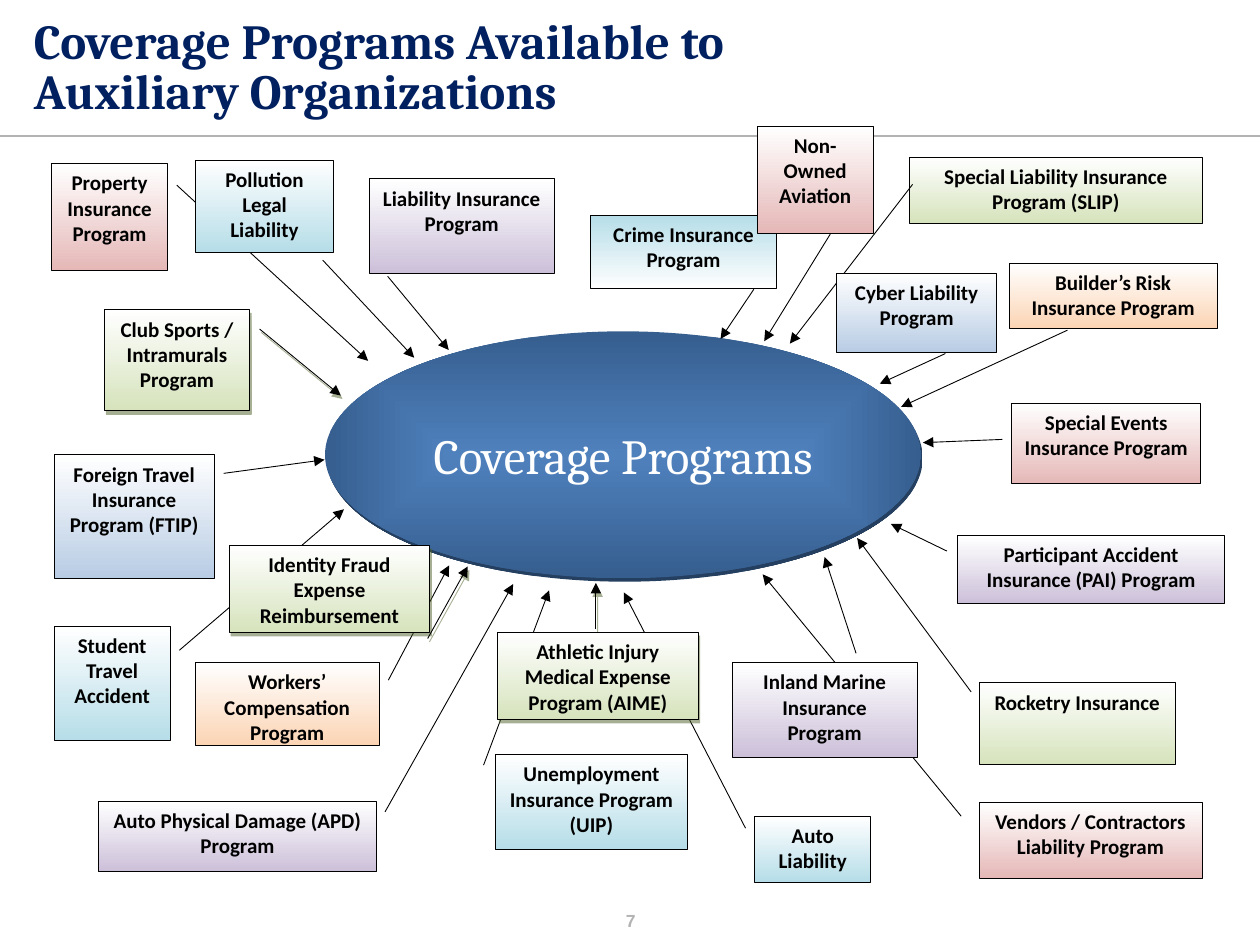
from lxml import etree
from pptx import Presentation
from pptx import util as u
from pptx.dml.color import RGBColor
from pptx.enum import shapes, text
from pptx.oxml import parse_xml
from pptx.oxml.ns import nsdecls, qn

COLS, ROWS = 100, 75
HUES = {
    "navy": "002060", "gray": "B3B3B3", "black": "000000", "white": "FFFFFF",
    "hub": "4F81BD", "rim": "365E8F", "deep": "243F60", "moss": "4E6128",
    "green": "D6E3BC", "aqua": "B6DDE8", "rose": "E5B8B7",
    "peach": "FBD4B4", "lilac": "CCC0D9", "blue": "B8CCE4",
}
FONTS = {
    "title": dict(name="Cambria", size=u.Pt(28), bold=True),
    "hub": dict(name="Cambria", size=u.Pt(28), bold=False),
    "label": dict(name="Calibri", size=u.Pt(12), bold=True),
    "page": dict(name="Arial", size=u.Pt(10), bold=True),
}
CENTER, LEFT = text.PP_ALIGN.CENTER, text.PP_ALIGN.LEFT
TOP, MIDDLE = text.MSO_ANCHOR.TOP, text.MSO_ANCHOR.MIDDLE

# Label, tint, box (column, row, columns, rows),
# pointer (start y, start x, end y, end x as shares of the box)
BACK = [
    ("Special Liability Insurance Program (SLIP)", "green",
     (72.2, 12.5, 23.2, 5.2), (0.41, 0.01, 2.84, -0.41)),
    ("Student Travel Accident", "aqua",
     (4.3, 49.7, 9.2, 9.1), (0.21, 1.08, -1.02, 2.5)),
    ("Property Insurance Program", "rose",
     (4.1, 13, 9.2, 8.5), (0.2, 1.08, 1.84, 2.73)),
    ("Vendors / Contractors Liability Program", "rose",
     (77.7, 63.7, 17.7, 6), (0.18, -0.08, -3.02, -0.97)),
    ("Builder’s Risk Insurance Program", "peach",
     (80.1, 20.9, 16.5, 5.2), (1.02, 0.28, 2.19, -0.52)),
    ("Liability Insurance Program", "lilac",
     (29.3, 14.2, 14.7, 7.5), (1.03, 0.1, 1.81, 0.43)),
    ("Unemployment Insurance Program (UIP)", "aqua",
     (39.3, 59.9, 15.3, 7.5), (0.11, -0.06, -1.74, 0.28)),
    ("Rocketry Insurance", "green",
     (77.7, 54.2, 15.6, 6.5), (0.11, -0.04, -1.77, -0.62)),
    ("Participant Accident Insurance (PAI) Program", "lilac",
     (76, 42.5, 21.2, 5.4), (0.23, -0.04, -0.17, -0.25)),
    ("Club Sports / Intramurals Program", "green",
     (8.3, 24.6, 11.5, 8), (0.19, 1.07, 0.85, 1.63)),
    ("Auto Physical Damage (APD) Program", "lilac",
     (7.8, 63.6, 22.1, 5.6), (0.15, 1.03, -3.08, 1.49)),
    ("Foreign Travel Insurance Program (FTIP)", "blue",
     (4.3, 36.1, 12.7, 9.8), (0.15, 1.06, 0.04, 1.69)),
    ("Crime Insurance Program", "aqua",
     (46.9, 17.1, 14.7, 5.8), (1.01, 0.88, 1.69, 0.7)),
    ("Special Events Insurance Program", "rose",
     (80.3, 32, 15, 6.4), (0.45, -0.05, 0.49, -0.47)),
    ("Auto Liability", "aqua",
     (59.9, 64.8, 9.2, 5.2), (0.18, -0.08, -3.42, -1.13)),
    ("Workers’ Compensation Program", "peach",
     (15.5, 52.6, 14.6, 6.6), (0.21, 1.05, -1.17, 1.38)),
]
FRONT = [
    ("Inland Marine Insurance Program", "lilac",
     (58.1, 52.6, 14.7, 7.5), (-0.1, 0.67, -1.12, 0.5)),
    ("Pollution Legal Liability", "aqua",
     (15.5, 12.7, 11, 7.3), (1.09, 0.92, 2.15, 1.58)),
    ("Cyber Liability Program", "blue",
     (66.4, 21.7, 12.7, 6.3), (1.01, 0.68, 1.39, 0.27)),
    ("Identity Fraud Expense Reimbursement", "green",
     (18.2, 43.3, 15.9, 6.9), (1.07, 0.99, 0.24, 1.19)),
    ("Athletic Injury Medical Expense Program (AIME)", "green",
     (39.5, 50.2, 15.9, 6.9), (-0.04, 0.49, -0.57, 0.49)),
    ("Non-Owned Aviation", "rose",
     (60.1, 10, 9.2, 8.5), (1.01, 0.63, 2.01, 0.06)),
]
RAISED = ("Club Sports", "Identity Fraud", "Athletic Injury")
FLIPPED = ("Crime",)  # tint at the top instead of the bottom


class Deck:
    def __init__(self):
        self.show = Presentation()
        self.show.slide_width, self.show.slide_height = u.Inches(10), u.Inches(7.5)
        self.slide = self.show.slides.add_slide(self.show.slide_layouts[6])

    def place(self, box):
        wide, high = self.show.slide_width / COLS, self.show.slide_height / ROWS
        return [round(n * unit) for n, unit in zip(box, (wide, high) * 2)]

    def hue(self, name):
        return RGBColor.from_string(HUES[name])

    def letter(self, shape, words, font, color, align=CENTER, anchor=TOP, **para):
        frame = shape.text_frame
        frame.word_wrap, frame.vertical_anchor = True, anchor
        line = frame.paragraphs[0]
        line.text, line.alignment = words, align
        for key, value in para.items():
            setattr(line, key, value)
        for key, value in FONTS[font].items():
            setattr(line.font, key, value)
        line.font.color.rgb = self.hue(color)

    def label(self, words, box, **style):
        self.letter(self.slide.shapes.add_textbox(*self.place(box)), words, **style)

    def rule(self, row):
        x1, y, x2, _ = self.place((0, row, COLS, row))
        line = self.slide.shapes.add_connector(shapes.MSO_CONNECTOR.STRAIGHT, x1, y, x2, y)
        line.line.color.rgb, line.line.width = self.hue("gray"), u.Pt(0.75)
        etree.SubElement(line._element.spPr, qn("a:effectLst"))

    def form(self, kind, box, start, end):
        shape = self.slide.shapes.add_shape(kind, *self.place(box))
        shape.shadow.inherit = False
        shape.fill.gradient()
        shape.fill.gradient_angle = 270
        for stop, (at, name) in zip(shape.fill.gradient_stops, ((0, start), (1, end))):
            stop.position, stop.color.rgb = at, self.hue(name)
        return shape

    def shade(self, shape, name, alpha):
        shape._element.spPr.find(qn("a:effectLst")).append(parse_xml(
            f'<a:outerShdw {nsdecls("a")} blurRad="0" dist="28000" dir="3780000" '
            f'algn="ctr" rotWithShape="0"><a:srgbClr val="{HUES[name]}">'
            f'<a:alpha val="{alpha * 1000}"/></a:srgbClr></a:outerShdw>'))

    def hub(self, words, box):
        shape = self.form(shapes.MSO_SHAPE.OVAL, box, "hub", "rim")
        shape.line.fill.background()
        grad = shape._element.spPr.find(qn("a:gradFill"))
        grad.replace(grad.find(qn("a:lin")), parse_xml(
            f'<a:path {nsdecls("a")} path="shape"><a:fillToRect '
            'l="50000" t="50000" r="50000" b="50000"/></a:path>'))
        self.shade(shape, "deep", 100)
        for side in ("left", "top", "right", "bottom"):
            setattr(shape.text_frame, f"margin_{side}", u.Inches(0.01))
        self.letter(shape, words, "hub", "white", anchor=MIDDLE, space_after=u.Pt(10))

    def callout(self, words, tint, box, pointer):
        ends = (tint, "white") if words.startswith(FLIPPED) else ("white", tint)
        shape = self.form(shapes.MSO_SHAPE.LINE_CALLOUT_1, box, *ends)
        for i, share in enumerate(pointer):
            shape.adjustments[i] = share
        shape.line.color.rgb, shape.line.width = self.hue("black"), u.Pt(0.5)
        edge = shape._element.spPr.find(qn("a:ln"))
        etree.SubElement(edge, qn("a:tailEnd"), type="triangle")
        if words.startswith(RAISED):
            self.shade(shape, "moss", 50)
        self.letter(shape, words, "label", "black", space_after=u.Pt(10))


def main():
    deck = Deck()
    # Heading
    deck.rule(10.8)
    deck.label("Coverage Programs Available to Auxiliary Organizations",
               (1.7, 0.1, 69.9, 10.8), font="title", color="navy",
               align=LEFT, anchor=MIDDLE, line_spacing=0.85)
    # Hub and the programs pointing at it
    deck.hub("Coverage Programs", (25.8, 26.3, 47.3, 19.6))
    for program in BACK:
        deck.callout(*program)
    # Page number
    deck.label("7", (34.2, 71.7, 31.7, 3.3), font="page", color="gray")
    # Programs that overlap the others
    for program in FRONT:
        deck.callout(*program)
    deck.show.save("out.pptx")


if __name__ == "__main__":
    main()
